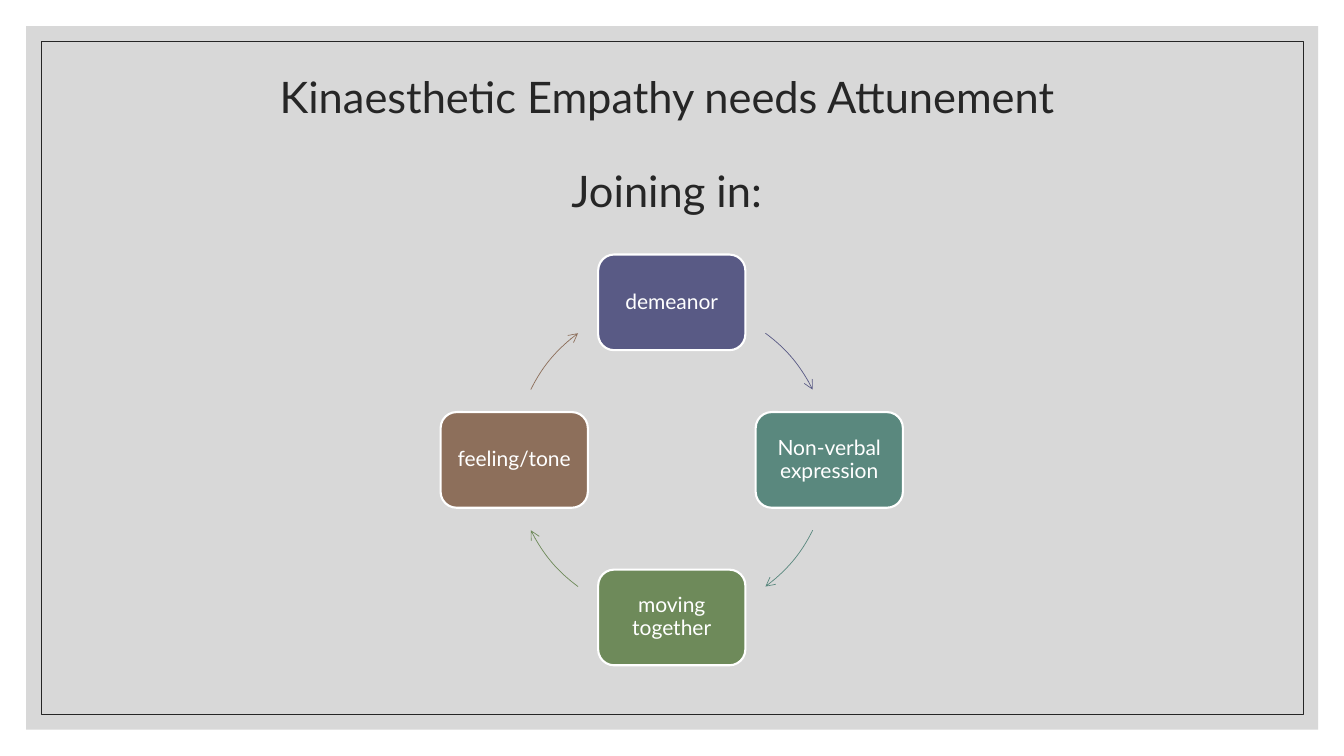
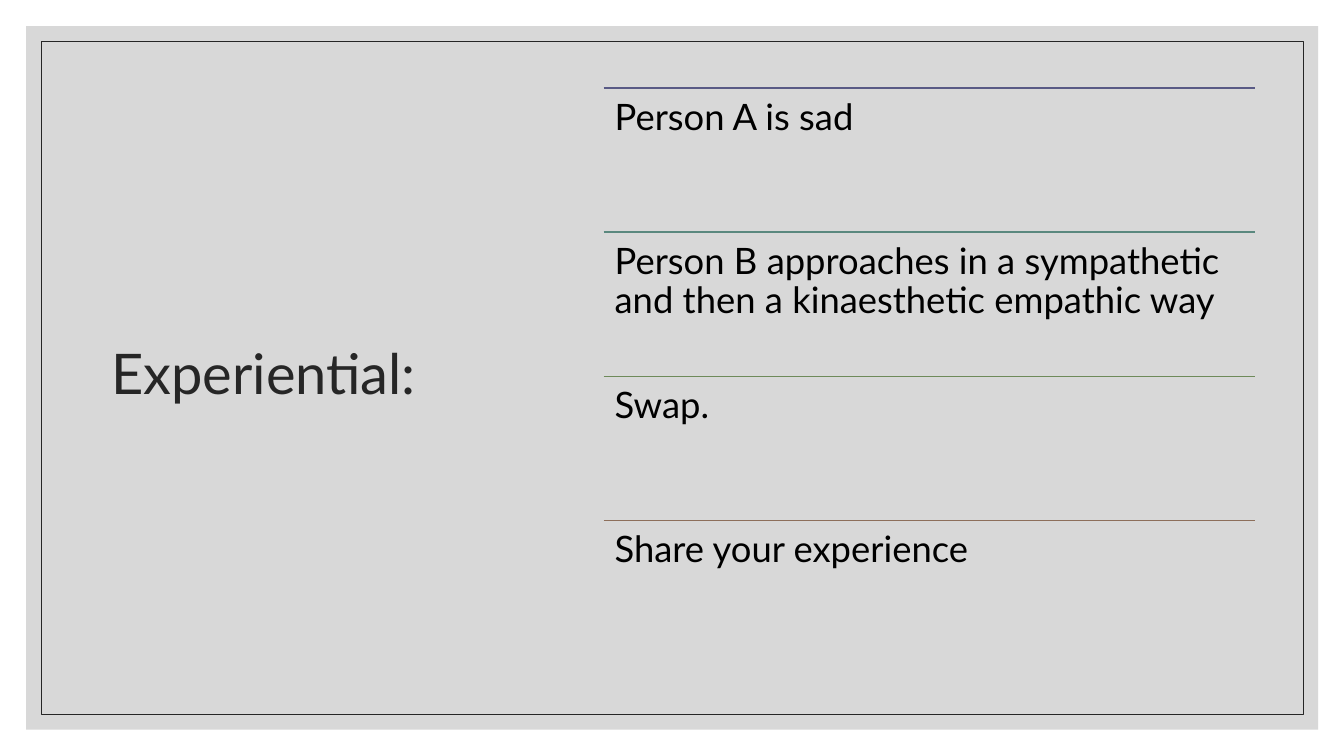
import math

import pptx
import pptx.dml.color
import pptx.enum.shapes
import pptx.enum.text
import pptx.oxml.ns
import pptx.util
from lxml import etree
from pptx.util import Cm, Pt

COLORS = {
    "band": "BFBFBF",
    "ink": "262626",
    "black": "000000",
    "white": "FFFFFF",
    "violet": "595A85",
    "teal": "5A887E",
    "green": "6E8A5A",
    "brown": "8D6F5B",
}
ACCENTS = ["violet", "teal", "green", "brown"]
SHAPES = pptx.enum.shapes.MSO_SHAPE
ALIGN = pptx.enum.text.PP_ALIGN
ANCHOR = pptx.enum.text.MSO_ANCHOR
qn = pptx.oxml.ns.qn


def color(name):
    return pptx.dml.color.RGBColor.from_string(COLORS[name])


def write(frame, text, size=15, ink="black", align=ALIGN.LEFT, anchor=ANCHOR.TOP,
          inset=None, gap=0):
    frame.word_wrap = True
    frame.auto_size = pptx.enum.text.MSO_AUTO_SIZE.NONE
    frame.vertical_anchor = anchor
    if inset is not None:
        frame.margin_left = frame.margin_right = Cm(inset)
        frame.margin_top = frame.margin_bottom = Cm(inset)
    for index, words in enumerate(text.split("\n")):
        para = frame.paragraphs[0] if index == 0 else frame.add_paragraph()
        para.alignment = align
        para.line_spacing = 0.9
        para.space_before = Pt(gap if index else 0)
        span = para.add_run()
        span.text = words
        span.font.name = "Lato"
        span.font.size = Pt(size)
        span.font.color.rgb = color(ink)


class Slides:
    def __init__(self):
        self.deck = pptx.Presentation()
        self.deck.slide_width = Cm(33.87)
        self.deck.slide_height = Cm(19.05)
        self.page = None

    def start(self, title, place, size):
        self.page = self.deck.slides.add_slide(self.deck.slide_layouts[5])
        band = self.shape(SHAPES.RECTANGLE, 0.66, 0.66, 32.56, 17.73, fill="band")
        tint = band.element.spPr.find(".//" + qn("a:srgbClr"))
        etree.SubElement(tint, qn("a:alpha"), val="60000")
        self.shape(SHAPES.RECTANGLE, 1.04, 1.04, 31.8, 16.97, line="ink", width=0.5)
        box = self.page.shapes.title
        self.page.shapes.element.append(box.element)
        box.left, box.top, box.width, box.height = map(Cm, place)
        write(box.text_frame, title, size=size, ink="ink", align=ALIGN.CENTER,
              anchor=ANCHOR.MIDDLE, gap=33.5)

    def paint(self, shape, fill=None, line=None, width=1):
        shape.shadow.inherit = False
        if fill:
            shape.fill.solid()
            shape.fill.fore_color.rgb = color(fill)
        else:
            shape.fill.background()
        if line:
            shape.line.color.rgb = color(line)
            shape.line.width = Pt(width)
        else:
            shape.line.fill.background()
        return shape

    def shape(self, kind, left, top, width_cm, height_cm, **style):
        shape = self.page.shapes.add_shape(
            kind, Cm(left), Cm(top), Cm(width_cm), Cm(height_cm))
        return self.paint(shape, **style)

    def card(self, text, middle_x, middle_y, fill):
        width, height = 3.71, 2.41
        card = self.shape(SHAPES.ROUNDED_RECTANGLE, middle_x - width / 2,
                          middle_y - height / 2, width, height,
                          fill=fill, line="white", width=1.5)
        write(card.text_frame, text, ink="white", align=ALIGN.CENTER,
              anchor=ANCHOR.MIDDLE, inset=0.15)

    def arc_arrow(self, middle_x, middle_y, radius, first, last, line):
        left, top = Cm(middle_x - radius), Cm(middle_y - radius)
        side = Cm(2 * radius)
        builder = self.page.shapes.build_freeform(left, top)
        builder.add_line_segments([(left + side, top + side)], close=False)
        arrow = self.paint(builder.convert_to_shape(), line=line, width=0.5)
        etree.SubElement(arrow.element.spPr.find(qn("a:ln")), qn("a:tailEnd"), type="arrow")

        start, end = math.radians(first), math.radians(last)
        pull = 4 / 3 * math.tan((end - start) / 4)
        curve = [(start, 0), (start, pull), (end, -pull), (end, 0)]
        points = [(radius * (1 + math.cos(angle) - reach * math.sin(angle)),
                   radius * (1 + math.sin(angle) + reach * math.cos(angle)))
                  for angle, reach in curve]
        outline = arrow.element.spPr.find(".//" + qn("a:path"))
        for segment in list(outline):
            outline.remove(segment)
        for tag, group in (("a:moveTo", points[:1]), ("a:cubicBezTo", points[1:])):
            segment = etree.SubElement(outline, qn(tag))
            for x, y in group:
                etree.SubElement(segment, qn("a:pt"), x=str(int(Cm(x))), y=str(int(Cm(y))))

    def rule(self, left, top, width, line):
        rule = self.page.shapes.add_connector(
            pptx.enum.shapes.MSO_CONNECTOR.STRAIGHT,
            Cm(left), Cm(top), Cm(left + width), Cm(top))
        rule.line.color.rgb = color(line)
        rule.line.width = Pt(1)
        etree.SubElement(rule.element.spPr, qn("a:effectLst"))

    def text(self, text, left, top, width, height, **style):
        box = self.page.shapes.add_textbox(Cm(left), Cm(top), Cm(width), Cm(height))
        write(box.text_frame, text, **style)


def attunement_cycle(slides):
    slides.start("Kinaesthetic Empathy needs Attunement \nJoining in: ",
                 (2.97, 1.78, 27.94, 3.81), 31)
    middle_x, middle_y, radius = 16.93, 11.59, 3.97
    labels = ["demeanor", "Non-verbal expression", "moving together", "feeling/tone"]
    arc_middles = [-40, 40, 140, 220]
    for index, (label, accent, arc) in enumerate(zip(labels, ACCENTS, arc_middles)):
        angle = math.radians(90 * index - 90)
        slides.card(label, middle_x + radius * math.cos(angle),
                    middle_y + radius * math.sin(angle), accent)
        slides.arc_arrow(middle_x, middle_y, radius, arc - 13.5, arc + 13.5, accent)


def experiential_steps(slides):
    slides.start("Experiential: ", (1.6, 1.55, 10.45, 15.85), 40)
    left, top, width, height = 15.21, 2.22, 16.41, 3.63
    steps = [
        "Person A is sad",
        "Person B approaches in a sympathetic and then a kinaesthetic empathic way",
        "Swap.",
        "Share your experience",
    ]
    for index, (step, accent) in enumerate(zip(steps, ACCENTS)):
        row_top = top + index * height
        slides.rule(left, row_top, width, accent)
        slides.text(step, left, row_top, width, height, size=26, inset=0.28)


def main():
    slides = Slides()
    attunement_cycle(slides)
    experiential_steps(slides)
    slides.deck.save("out.pptx")


if __name__ == "__main__":
    main()
